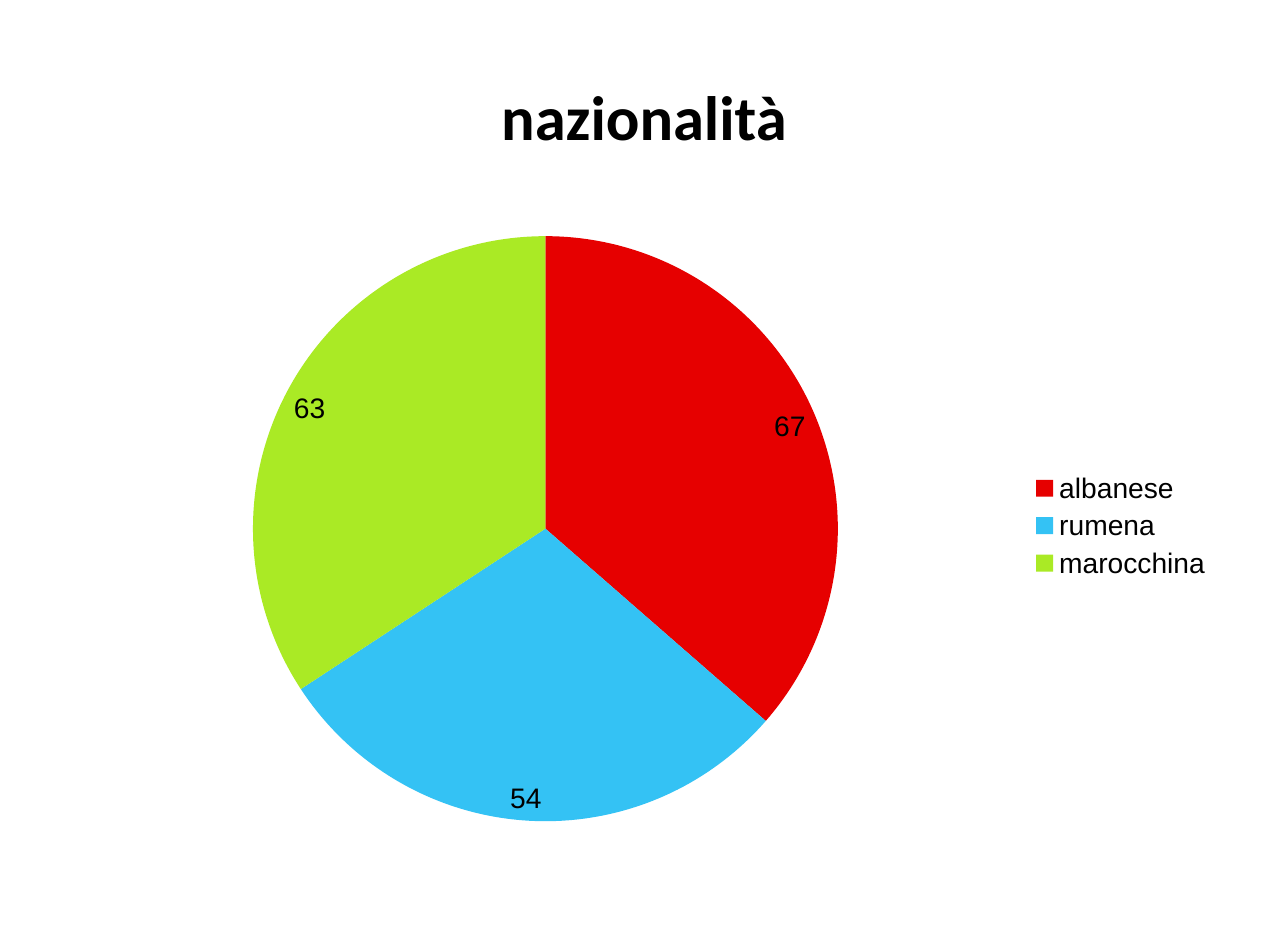
import pptx
import pptx.chart.data
import pptx.dml.color
import pptx.enum.chart
import pptx.enum.text
import pptx.oxml
import pptx.oxml.ns
import pptx.util
from pptx.util import Inches

COLORS = {
    "text": "000000",
    "background": "FFFFFF",
    "albanese": "E60000",
    "rumena": "34C2F4",
    "marocchina": "AAEA25",
}
COUNTS = {"albanese": 67, "rumena": 54, "marocchina": 63}
PIE_AREA = {"x": 0.16, "y": 0.03, "w": 0.51, "h": 0.95}


def rgb(name):
    return pptx.dml.color.RGBColor.from_string(COLORS[name])


presentation = pptx.Presentation()
presentation.slide_width = Inches(11.42)
presentation.slide_height = Inches(8.27)
slide = presentation.slides.add_slide(presentation.slide_layouts[5])
slide.background.fill.solid()
slide.background.fill.fore_color.rgb = rgb("background")

# Title
title = slide.shapes.title
title.left, title.top = Inches(0.57), Inches(0.33)
title.width, title.height = Inches(10.28), Inches(1.38)
frame = title.text_frame
frame.vertical_anchor = pptx.enum.text.MSO_ANCHOR.MIDDLE
frame.margin_left = frame.margin_right = Inches(0.11)
frame.margin_top = frame.margin_bottom = Inches(0.06)
paragraph = frame.paragraphs[0]
paragraph.alignment = pptx.enum.text.PP_ALIGN.CENTER
run = paragraph.add_run()
run.text = "nazionalità"
run.font.name = "Calibri"
run.font.size = pptx.util.Pt(40)
run.font.bold = True
run.font.color.rgb = rgb("text")

# Pie chart
chart_data = pptx.chart.data.CategoryChartData()
chart_data.categories = list(COUNTS)
chart_data.add_series("Series 1", list(COUNTS.values()))
chart = slide.shapes.add_chart(
    pptx.enum.chart.XL_CHART_TYPE.PIE,
    Inches(0.57), Inches(1.93), Inches(10.28), Inches(5.46), chart_data,
).chart
chart.has_title = False
chart.font.name = "Arial"
chart.font.size = pptx.util.Pt(18)
chart.font.color.rgb = rgb("text")
chart.has_legend = True
chart.legend.position = pptx.enum.chart.XL_LEGEND_POSITION.RIGHT
chart.legend.include_in_layout = False

plot = chart.plots[0]
plot.vary_by_categories = True
for index, nationality in enumerate(COUNTS):
    fill = plot.series[0].points[index].format.fill
    fill.solid()
    fill.fore_color.rgb = rgb(nationality)

plot.has_data_labels = True
labels = plot.data_labels
labels.show_value = True
labels.show_percentage = False
labels.position = pptx.enum.chart.XL_LABEL_POSITION.INSIDE_END

# Fixed place of the pie inside the chart
plot_area = chart._chartSpace.chart.plotArea
for old_layout in plot_area.findall(pptx.oxml.ns.qn("c:layout")):
    plot_area.remove(old_layout)
modes = "".join(f'<c:{axis}Mode val="edge"/>' for axis in "xy")
lengths = "".join(f'<c:{key} val="{value}"/>' for key, value in PIE_AREA.items())
plot_area.insert(0, pptx.oxml.parse_xml(
    f'<c:layout {pptx.oxml.ns.nsdecls("c")}><c:manualLayout>'
    f'<c:layoutTarget val="inner"/>{modes}{lengths}'
    "</c:manualLayout></c:layout>"
))

presentation.save("out.pptx")
